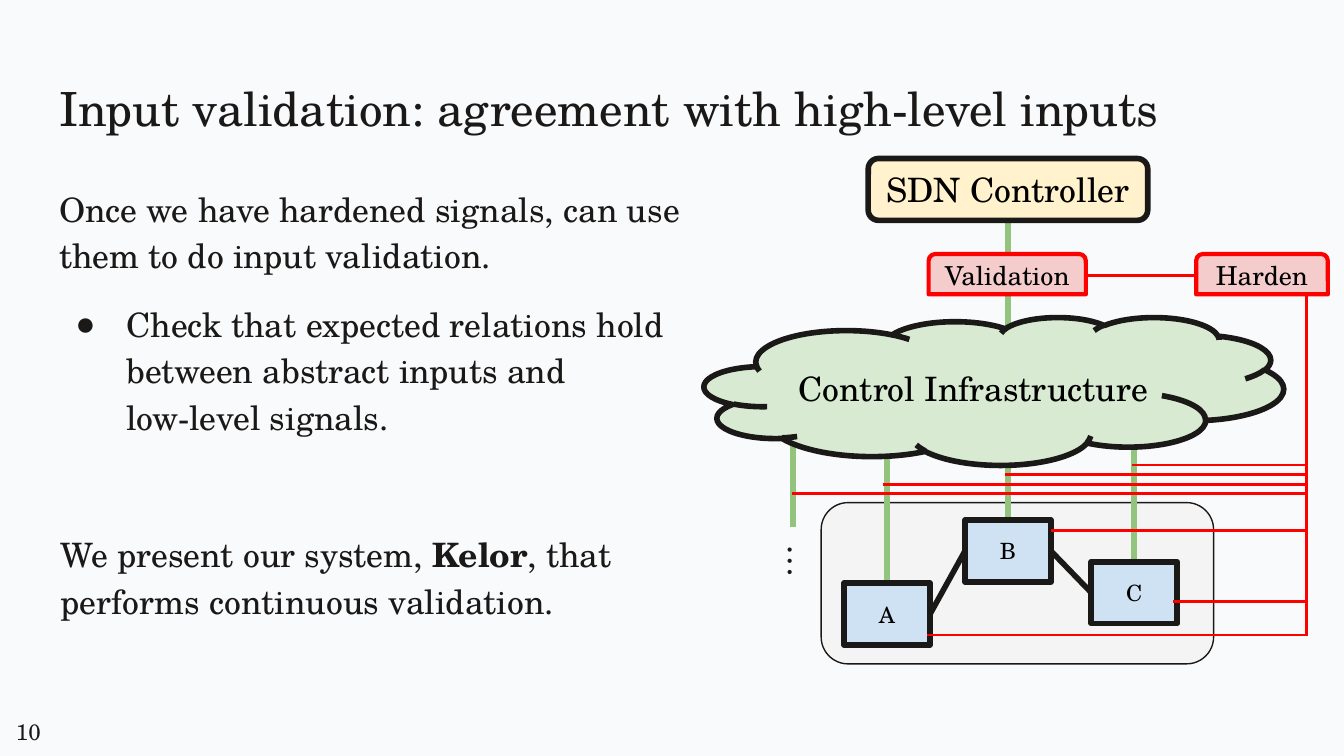
from dataclasses import dataclass
from typing import Optional

from lxml.etree import SubElement
from pptx import Presentation
from pptx.dml.color import RGBColor
from pptx.enum.shapes import MSO_CONNECTOR as Wire, MSO_SHAPE as Preset
from pptx.enum.text import MSO_ANCHOR as Anchor, MSO_AUTO_SIZE as Fit, PP_ALIGN as Align
from pptx.oxml.ns import qn
from pptx.util import Inches, Pt

COLUMNS, ROWS = 100, 56.25
UNIT = Inches(0.1)
FONT = "TeX Gyre Schola"
PAPER = RGBColor(0xF9, 0xFA, 0xFB)
INK = RGBColor(0x1B, 0x19, 0x18)
BLACK = RGBColor(0, 0, 0)
RED = RGBColor(0xFF, 0, 0)
GREEN = RGBColor(0x93, 0xC4, 0x7D)
CREAM = RGBColor(0xFF, 0xF2, 0xCC)
GREY = RGBColor(0xF0, 0xF0, 0xF0)
BLUE = RGBColor(0xCF, 0xE2, 0xF3)
MINT = RGBColor(0xD9, 0xEA, 0xD3)
PINK = RGBColor(0xF4, 0xCC, 0xCC)
TOP, LEFT, BOTTOM, RIGHT = range(4)
TAP_COLUMN = 97.2


@dataclass
class Area:
    """A rectangle in grid columns and rows."""
    column: float
    row: float
    width: float
    height: float

    def lengths(self) -> list[int]:
        """Return left, top, width and height as slide lengths."""
        return [grid(value) for value in (self.column, self.row, self.width, self.height)]


@dataclass
class Block:
    """A filled, outlined shape with an optional label."""
    name: str
    area: Area
    fill: RGBColor
    preset: Preset = Preset.RECTANGLE
    line: RGBColor = INK
    weight: float = 3
    size: float = 12
    label: bool = True
    alpha: Optional[int] = None


@dataclass
class Link:
    """A straight line, optionally joined to the sides of named blocks."""
    start: tuple[float, float]
    end: tuple[float, float]
    color: RGBColor = RED
    weight: float = 1.5
    begin: Optional[tuple[str, int]] = None
    finish: Optional[tuple[str, int]] = None


def grid(value: float) -> int:
    """Turn grid units into a slide length."""
    return int(value * UNIT)


def tap(column: float, row: float) -> Link:
    """Describe a red signal line running to the hardening trunk."""
    return Link((column, row), (TAP_COLUMN, row))


def router(name: str, column: float, row: float) -> Block:
    """Describe one network router."""
    return Block(name, Area(column, row, 6.4, 4.6), BLUE)


def stage(name: str, column: float, width: float) -> Block:
    """Describe one red checking stage."""
    return Block(name, Area(column, 18.9, width, 3), PINK, Preset.ROUND_2_SAME_RECTANGLE,
                 RED, 2.25, 14)


DIAGRAM = [
    Link((80, 20.5), (89.8, 20.5)),
    Link((75, 16.4), (75, 26.9), GREEN, 3, ("SDN Controller", BOTTOM)),
    Block("SDN Controller", Area(64.6, 11.8, 20.8, 4.6), CREAM, Preset.ROUNDED_RECTANGLE, size=18),
    Block("Network", Area(61.1, 37.4, 29.2, 12), GREY, Preset.ROUNDED_RECTANGLE,
          weight=0.75, label=False, alpha=50),
    Link((59, 32.4), (59, 39.2), GREEN, 3),
    Link((69.2, 45.7), (71.8, 41), INK, 3, ("A", RIGHT), ("B", LEFT)),
    Link((78.2, 41), (81.2, 44.1), INK, 3, ("B", RIGHT), ("C", LEFT)),
    Link((66, 30.6), (66, 43.4), GREEN, 3, None, ("A", TOP)),
    Link((75, 32.4), (75, 38.7), GREEN, 3, None, ("B", TOP)),
    Link((84.4, 28.4), (84.4, 41.8), GREEN, 3, None, ("C", TOP)),
    Link((TAP_COLUMN, 20.1), (TAP_COLUMN, 47.3)),
    tap(58.9, 36.75), tap(65.7, 36.03), tap(74.8, 35.3), tap(84.2, 34.6),
    router("B", 71.8, 38.7), router("C", 81.2, 41.8), router("A", 62.8, 43.4),
    Block("Control Infrastructure", Area(52.4, 23.6, 43.1, 11), MINT, Preset.CLOUD, size=18),
    stage("Harden", 89, 9.8),
    tap(87.3, 44.75), tap(69, 47.25), tap(78.2, 39.5),
    stage("Validation", 69.1, 11.7),
]


def prepare(frame, anchor: Anchor = Anchor.TOP) -> None:
    """Give a text frame its insets, wrapping and anchor."""
    values = {"word_wrap": True, "auto_size": Fit.NONE, "vertical_anchor": anchor}
    values |= {f"margin_{side}": grid(1) for side in ("left", "top", "right", "bottom")}
    for name, value in values.items():
        setattr(frame, name, value)


def write(para, parts: list[str], size: float, color: RGBColor = INK,
          bold: str = "", **layout) -> None:
    """Fill a paragraph with spans, breaking the line at each newline part."""
    for name, value in layout.items():
        setattr(para, name, value)
    for part in parts:
        if part == "\n":
            para.add_line_break()
            continue
        span = para.add_run()
        span.text = part
        style = {"name": FONT, "size": Pt(size), "bold": part == bold}
        for name, value in style.items():
            setattr(span.font, name, value)
        span.font.color.rgb = color


def set_bullet(para, symbol: str = "", margin: float = 0, hang: float = 0) -> None:
    """Set the bullet and indent of a paragraph, or remove the bullet."""
    props = para._p.get_or_add_pPr()
    props.set("marL", str(grid(margin)))
    props.set("indent", str(grid(hang)))
    if symbol:
        SubElement(props, qn("a:buChar")).set("char", symbol)
    else:
        SubElement(props, qn("a:buNone"))


def place(holder, area: Area) -> None:
    """Move a placeholder to an area."""
    for name, value in zip(("left", "top", "width", "height"), area.lengths()):
        setattr(holder, name, value)
    prepare(holder.text_frame)


def add_text(page, area: Area, parts: list[str], size: float, rotation: float = 0, **layout) -> None:
    """Add a one-paragraph text box."""
    box = page.shapes.add_textbox(*area.lengths())
    box.rotation = rotation
    prepare(box.text_frame)
    write(box.text_frame.paragraphs[0], parts, size, **layout)


def add_block(page, block: Block):
    """Draw a block and return its shape."""
    shape = page.shapes.add_shape(block.preset, *block.area.lengths())
    shape.shadow.inherit = False
    shape.fill.solid()
    shape.fill.fore_color.rgb = block.fill
    if block.alpha is not None:
        color = shape.element.spPr.find(qn("a:solidFill"))[0]
        SubElement(color, qn("a:alpha")).set("val", str(block.alpha * 1000))
    shape.line.color.rgb = block.line
    shape.line.width = Pt(block.weight)
    if block.label:
        prepare(shape.text_frame, Anchor.MIDDLE)
        write(shape.text_frame.paragraphs[0], [block.name], block.size, BLACK, alignment=Align.CENTER)
    return shape


def add_link(page, link: Link):
    """Draw a link and return its connector."""
    wire = page.shapes.add_connector(Wire.STRAIGHT, *map(grid, link.start + link.end))
    wire.line.color.rgb = link.color
    wire.line.width = Pt(link.weight)
    SubElement(wire._element.spPr, qn("a:effectLst"))
    return wire


def add_diagram(page) -> None:
    """Draw the diagram from back to front, then join its links."""
    shapes, wires = {}, []
    for item in DIAGRAM:
        if isinstance(item, Block):
            shapes[item.name] = add_block(page, item)
        else:
            wires.append((add_link(page, item), item))
    for wire, link in wires:
        for join, target in ((wire.begin_connect, link.begin), (wire.end_connect, link.finish)):
            if target:
                join(shapes[target[0]], target[1])


def main() -> None:
    """Build and save the deck."""
    deck = Presentation()
    deck.slide_width, deck.slide_height = grid(COLUMNS), grid(ROWS)
    page = deck.slides.add_slide(deck.slide_layouts[1])
    page.background.fill.solid()
    page.background.fill.fore_color.rgb = PAPER
    title, body = page.shapes.title, page.placeholders[1]
    place(title, Area(3.4, 4.9, 93.2, 6.3))
    write(title.text_frame.paragraphs[0], ["Input validation: agreement with high-level inputs"],
          25.2, alignment=Align.LEFT)
    place(body, Area(3.4, 12.6, 51.1, 44.8))
    intro, point = body.text_frame.paragraphs[0], body.text_frame.add_paragraph()
    write(intro, ["Once we have hardened signals, can use them to do input validation."], 18,
          line_spacing=1.15, space_before=Pt(0))
    set_bullet(intro)
    write(point, ["Check that expected relations hold between abstract inputs and", "\n",
                  "low-level signals."], 18, line_spacing=1.15, space_before=Pt(12))
    set_bullet(point, "●", 5, -3.8)
    add_diagram(page)
    add_text(page, Area(0.2, 52.4, 5.1, 3.5), ["10"], 12)
    add_text(page, Area(55, 38.6, 8, 6.3), ["…"], 18, 90, alignment=Align.CENTER)
    add_text(page, Area(3.5, 38.3, 49.9, 8.5),
             ["We present our system, ", "Kelor", ", that performs continuous validation."], 18,
             bold="Kelor", line_spacing=1.15, space_after=Pt(12))
    deck.save("out.pptx")


if __name__ == "__main__":
    main()
